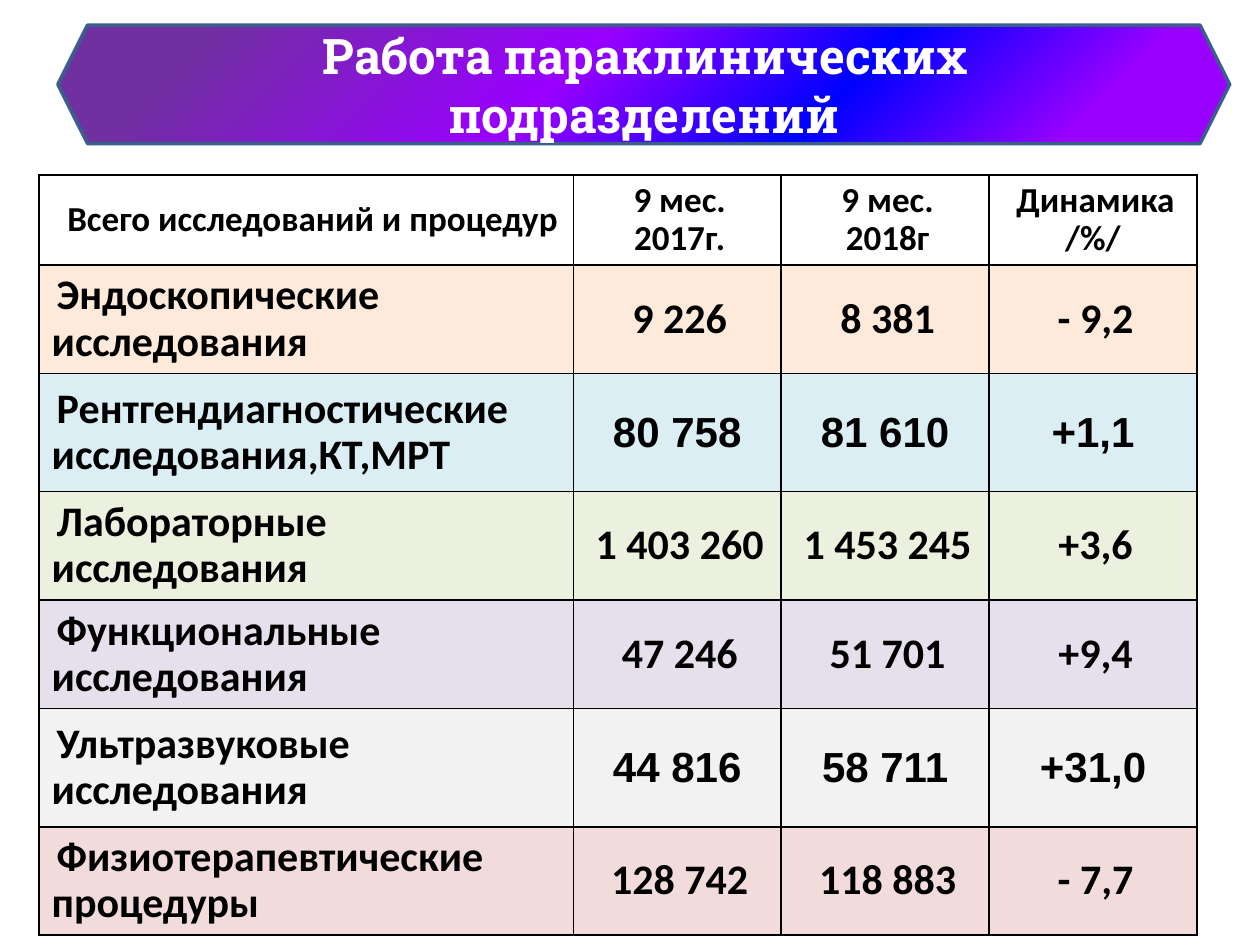
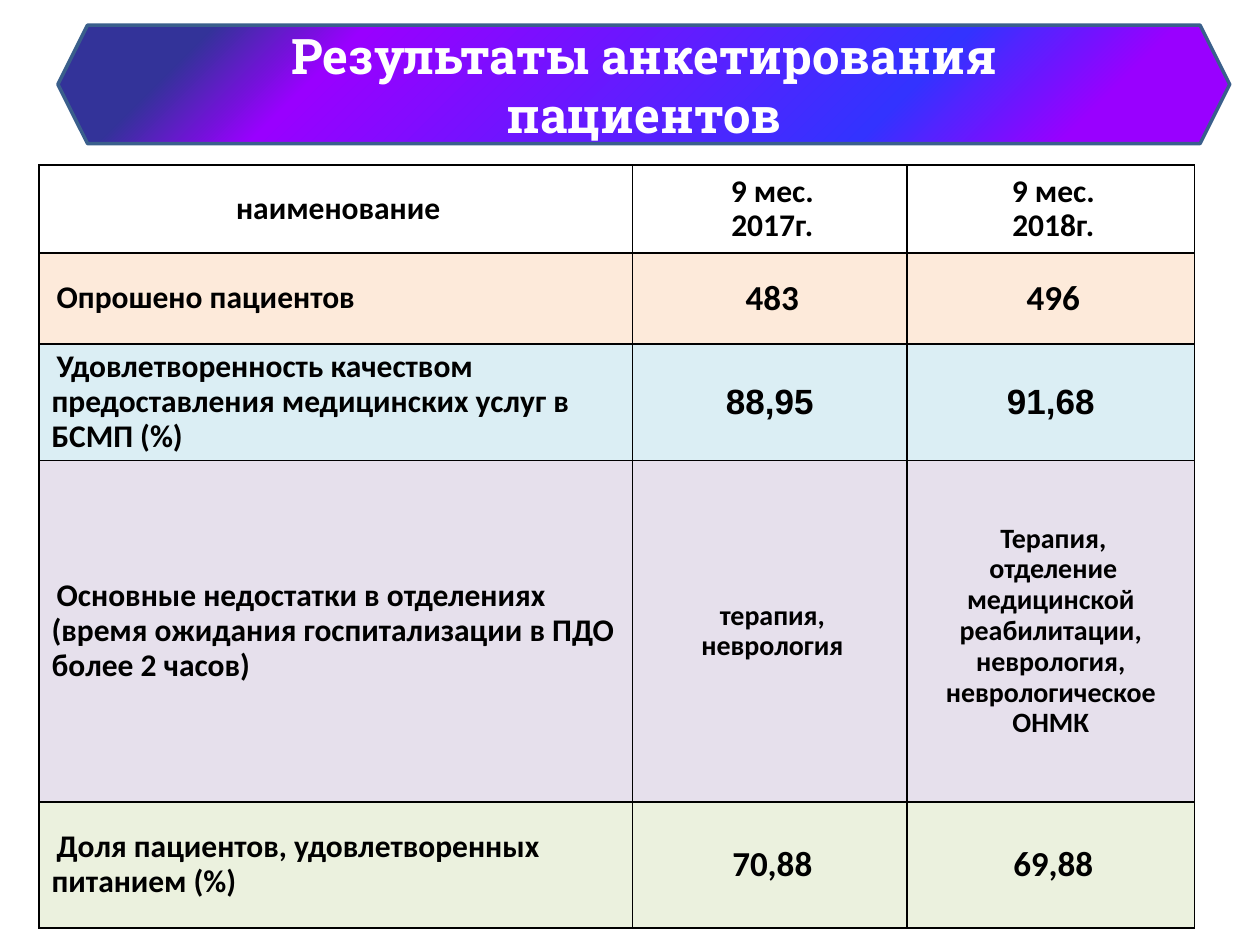
from dataclasses import dataclass

from lxml import etree
from pptx import Presentation
from pptx.dml.color import RGBColor
from pptx.enum import shapes, text
from pptx.oxml import ns
from pptx.util import Inches, Pt

# Shared look
BLACK, WHITE, BAND_LINE = "000000", "FFFFFF", "3A5F8C"
PEACH, AQUA, GREEN = "FDEADA", "DBEEF4", "EBF1DE"
LILAC, GREY, ROSE = "E6E0EC", "F2F2F2", "F2DCDB"
BODY_FONT, NUMBER_FONT, TITLE_FONT = "Calibri", "Arial", "Roboto Slab"
BAND_LEFT, BAND_TOP, BAND_WIDTH, BAND_HEIGHT = 0.46, 0.2, 9.3, 0.94
TITLE_INSET = 0.9
TABLE_LEFT = 0.31


@dataclass
class Row:
    height: float
    fill: str
    label: str
    values: list[str]
    label_size: int
    value_size: int
    value_font: str = BODY_FONT
    label_align: text.PP_ALIGN = text.PP_ALIGN.LEFT


@dataclass
class TablePage:
    title: str
    gradient: list[tuple[int, str]]
    table_top: float
    columns: list[float]
    rows: list[Row]


def colour(value: str) -> RGBColor:
    return RGBColor.from_string(value)


def add_node(parent, tag: str, **attributes):
    node = etree.SubElement(parent, ns.qn(tag))
    for name, value in attributes.items():
        node.set(name, str(value))
    return node


def format_span(span, size: int, font: str, ink: str) -> None:
    for name, value in {"size": Pt(size), "name": font, "bold": True}.items():
        setattr(span.font, name, value)
    span.font.color.rgb = colour(ink)


# Title band
def fill_gradient(band, stops: list[tuple[int, str]]) -> None:
    band.fill.gradient()
    band.fill.gradient_angle = 135
    stop_list = band._element.spPr.find(".//" + ns.qn("a:gsLst"))
    for old_stop in list(stop_list):
        stop_list.remove(old_stop)
    for position, value in stops:
        stop = add_node(stop_list, "a:gs", pos=position * 1000)
        add_node(stop, "a:srgbClr", val=value)


def draw_title(page, content: TablePage) -> None:
    band = page.shapes.add_shape(
        shapes.MSO_SHAPE.HEXAGON, Inches(BAND_LEFT), Inches(BAND_TOP),
        Inches(BAND_WIDTH), Inches(BAND_HEIGHT))
    band.shadow.inherit = False
    fill_gradient(band, content.gradient)
    band.line.color.rgb = colour(BAND_LINE)
    band.line.width = Pt(2)

    title = page.shapes.title
    title._element.addprevious(band._element)
    place = {"left": BAND_LEFT + TITLE_INSET, "top": BAND_TOP,
             "width": BAND_WIDTH - 2 * TITLE_INSET, "height": BAND_HEIGHT}
    for name, value in place.items():
        setattr(title, name, Inches(value))
    frame = title.text_frame
    frame.text = content.title
    settings = {"word_wrap": True, "auto_size": text.MSO_AUTO_SIZE.NONE,
                "vertical_anchor": text.MSO_ANCHOR.MIDDLE}
    for name, value in settings.items():
        setattr(frame, name, value)
    para = frame.paragraphs[0]
    para.alignment = text.PP_ALIGN.CENTER
    format_span(para.runs[0], 28, TITLE_FONT, WHITE)


# Table
def draw_borders(cell) -> None:
    properties = cell._tc.get_or_add_tcPr()
    for side in ("a:lnL", "a:lnR", "a:lnT", "a:lnB"):
        line = add_node(properties, side, w=Pt(1))
        add_node(add_node(line, "a:solidFill"), "a:srgbClr", val=BLACK)


def write_cell(cell, words: str, fill: str, size: int, font: str,
               align: text.PP_ALIGN) -> None:
    draw_borders(cell)
    cell.fill.solid()
    cell.fill.fore_color.rgb = colour(fill)
    cell.vertical_anchor = text.MSO_ANCHOR.MIDDLE
    cell.text_frame.text = words
    for para in cell.text_frame.paragraphs:
        para.alignment = align
        if font == BODY_FONT:
            para.line_spacing = 0.9
            para._p.get_or_add_pPr().set("indent", str(Inches(0.04)))
        for span in para.runs:
            format_span(span, size, font, BLACK)


def draw_table(page, content: TablePage) -> None:
    table = page.shapes.add_table(
        len(content.rows), len(content.columns),
        Inches(TABLE_LEFT), Inches(content.table_top),
        Inches(sum(content.columns)),
        Inches(sum(row.height for row in content.rows))).table
    table.first_row = table.horz_banding = False
    for column, width in zip(table.columns, content.columns):
        column.width = Inches(width)
    for index, row in enumerate(content.rows):
        table.rows[index].height = Inches(row.height)
        write_cell(table.cell(index, 0), row.label, row.fill,
                   row.label_size, BODY_FONT, row.label_align)
        for place, value in enumerate(row.values, start=1):
            write_cell(table.cell(index, place), value, row.fill,
                       row.value_size, row.value_font, text.PP_ALIGN.CENTER)


# Contents
def header(height: float, label: str, values: list[str], size: int) -> Row:
    return Row(height, WHITE, label, values, size, size,
               label_align=text.PP_ALIGN.CENTER)


DEPARTMENTS = TablePage(
    "Работа параклинических подразделений",
    [(13, "9900FF"), (34, "0000FF"), (57, "9900FF"), (88, "7030A0")],
    1.39, [4.24, 1.65, 1.65, 1.65],
    [
        header(0.69, " Всего исследований и процедур ",
               ["9 мес.\n2017г.", "9 мес.\n2018г", "Динамика /%/"], 20),
        Row(0.86, PEACH, "Эндоскопические исследования",
            ["9 226", "8 381", "- 9,2"], 24, 24),
        Row(0.94, AQUA, "Рентгендиагностические исследования,КТ,МРТ",
            ["80 758", "81 610", "+1,1"], 24, 24, NUMBER_FONT),
        Row(0.86, GREEN, "Лабораторные исследования",
            ["1 403 260", "1 453 245", "+3,6"], 24, 24),
        Row(0.86, LILAC, "Функциональные исследования",
            ["47 246", "51 701", "+9,4"], 24, 24),
        Row(0.94, GREY, "Ультразвуковые исследования",
            ["44 816", "58 711", "+31,0"], 24, 24, NUMBER_FONT),
        Row(0.86, ROSE, "Физиотерапевтические процедуры",
            ["128 742", "118 883", "- 7,7"], 24, 24),
    ])

SURVEY = TablePage(
    "Результаты анкетирования пациентов",
    [(13, "9900FF"), (29, "3333FF"), (76, "9900FF"), (88, "333399")],
    1.31, [4.71, 2.18, 2.28],
    [
        header(0.7, "наименование", ["9 мес.\n2017г.", "9 мес.\n2018г."], 18),
        Row(0.72, PEACH, "Опрошено пациентов", ["483", "496"], 18, 20),
        Row(0.87, AQUA, "Удовлетворенность качеством предоставления "
            "медицинских услуг в БСМП (%)",
            ["88,95", "91,68"], 18, 20, NUMBER_FONT),
        Row(2.71, LILAC, "Основные недостатки в отделениях (время ожидания "
            "госпитализации в ПДО более 2 часов)",
            ["терапия,\nневрология",
             "Терапия,\nотделение медицинской реабилитации, "
             "неврология, неврологическое ОНМК"], 18, 16),
        Row(1, GREEN, "Доля пациентов, удовлетворенных питанием (%)",
            ["70,88", "69,88"], 18, 20),
    ])


def main() -> None:
    deck = Presentation()
    deck.slide_width, deck.slide_height = Inches(10), Inches(7.5)
    title_only = deck.slide_layouts[5]
    for content in (DEPARTMENTS, SURVEY):
        page = deck.slides.add_slide(title_only)
        draw_title(page, content)
        draw_table(page, content)
    deck.save("out.pptx")


if __name__ == "__main__":
    main()
